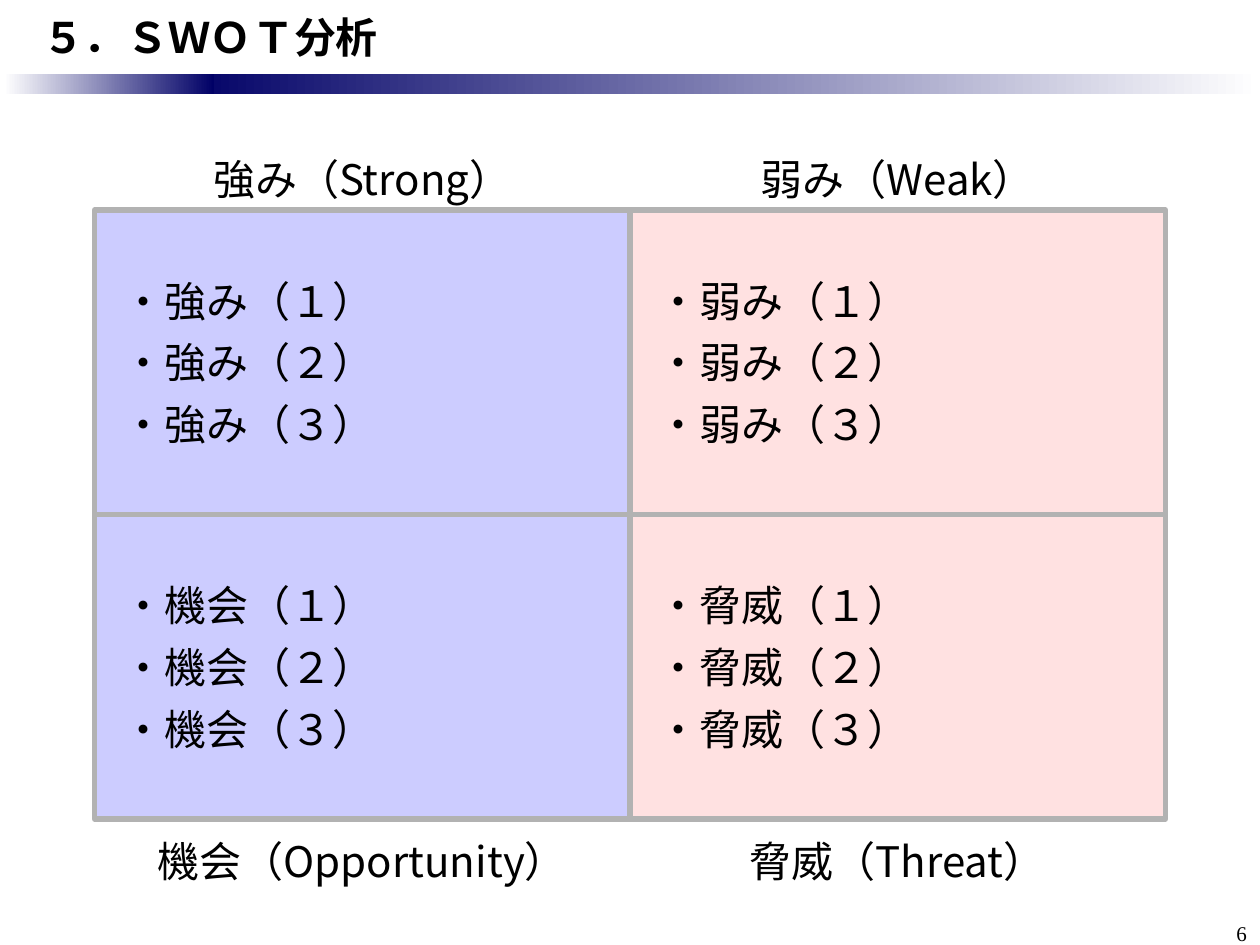
from lxml import etree
from pptx import Presentation
from pptx.dml.color import RGBColor
from pptx.enum.shapes import MSO_SHAPE
from pptx.enum.text import MSO_ANCHOR, MSO_AUTO_SIZE, PP_ALIGN
from pptx.oxml.ns import qn
from pptx.util import Emu, Pt

PX = 9525
TITLE_ONLY = 5
RECTANGLE = MSO_SHAPE.RECTANGLE
LEFT, CENTER, RIGHT = PP_ALIGN.LEFT, PP_ALIGN.CENTER, PP_ALIGN.RIGHT
TOP, MIDDLE = MSO_ANCHOR.TOP, MSO_ANCHOR.MIDDLE
NO_AUTOFIT = MSO_AUTO_SIZE.NONE
SANS, SERIF = "Noto Sans CJK JP", "Times New Roman"
COLORS = {
    "navy": "000066",
    "white": "FFFFFF",
    "black": "000000",
    "border": "B2B2B2",
    "blue": "CCCCFF",
    "pink": "FFE1E1",
}
GRID_LEFT, GRID_TOP, CELL_WIDTH, CELL_HEIGHT = 72, 160, 408, 232
LABEL_HEIGHT = 48
LABEL_TOPS = (112, 632)
QUADRANTS = (
    (("強み", "Strong"), ("弱み", "Weak")),
    (("機会", "Opportunity"), ("脅威", "Threat")),
)


class SlideBuilder:
    """Holds the style and the current slide, and adds each kind of element."""

    def __init__(self, slide):
        self.slide = slide

    def color(self, name):
        return RGBColor.from_string(COLORS[name])

    def box(self, *lengths):
        return [Emu(length * PX) for length in lengths]

    def set_text(self, shape, lines, align=LEFT, anchor=MIDDLE, size=24,
                 font_name=SANS, bold=False, inset=10, gap=0, wrap=True):
        frame = shape.text_frame
        frame.auto_size = NO_AUTOFIT
        frame.word_wrap = wrap
        frame.vertical_anchor = anchor
        frame.margin_left, frame.margin_right = self.box(inset, 10)
        frame.margin_top, frame.margin_bottom = self.box(5, 5)
        frame.text = "\n".join(lines)
        for index, paragraph in enumerate(frame.paragraphs):
            paragraph.alignment = align
            paragraph.space_before = Pt(gap if index else 0)
            font = paragraph.font
            font.size, font.bold, font.name = Pt(size), bold, font_name
            font.color.rgb = self.color("black")
            etree.SubElement(font._rPr, qn("a:ea")).set("typeface", font_name)

    def title(self, text):
        shape = self.slide.shapes.title
        shape.left, shape.top, shape.width, shape.height = self.box(0, 0, 960, 56)
        self.set_text(shape, [text], bold=True, inset=32)

    def rectangle(self, left, top, width, height):
        shape = self.slide.shapes.add_shape(
            RECTANGLE, *self.box(left, top, width, height))
        shape.shadow.inherit = False
        return shape

    def gradient_bar(self, left, width, start, end):
        shape = self.rectangle(left, 56, width, 16)
        shape.line.fill.background()
        shape.fill.gradient()
        shape.fill.gradient_angle = 0
        for stop, name in zip(shape.fill.gradient_stops, (start, end)):
            stop.color.rgb = self.color(name)

    def text(self, text, left, top, width, height, **style):
        shape = self.slide.shapes.add_textbox(*self.box(left, top, width, height))
        self.set_text(shape, [text], **style)

    def quadrant(self, name, left, top, fill):
        shape = self.rectangle(left, top, CELL_WIDTH, CELL_HEIGHT)
        shape.fill.solid()
        shape.fill.fore_color.rgb = self.color(fill)
        shape.line.color.rgb = self.color("border")
        shape.line.width = Pt(3)
        lines = [f"・{name}（{number}）" for number in "１２３"]
        self.set_text(shape, lines, inset=21, gap=6.4)


def main():
    presentation = Presentation()
    presentation.slide_width = Emu(960 * PX)
    presentation.slide_height = Emu(720 * PX)
    layout = presentation.slide_layouts[TITLE_ONLY]
    builder = SlideBuilder(presentation.slides.add_slide(layout))

    builder.gradient_bar(136, 824, "navy", "white")
    builder.gradient_bar(3, 160, "white", "navy")
    builder.title("５．ＳＷＯＴ分析")
    builder.text("6", 904, 696, 56, 24, align=RIGHT, anchor=TOP, size=12,
                 font_name=SERIF)
    for row, quadrants in enumerate(QUADRANTS):
        for column, (name, english) in enumerate(quadrants):
            left = GRID_LEFT + column * CELL_WIDTH
            builder.quadrant(name, left, GRID_TOP + row * CELL_HEIGHT,
                             ("blue", "pink")[column])
            builder.text(f"{name}（{english}）", left, LABEL_TOPS[row],
                         CELL_WIDTH, LABEL_HEIGHT, align=CENTER, wrap=False)
    presentation.save("out.pptx")


if __name__ == "__main__":
    main()
